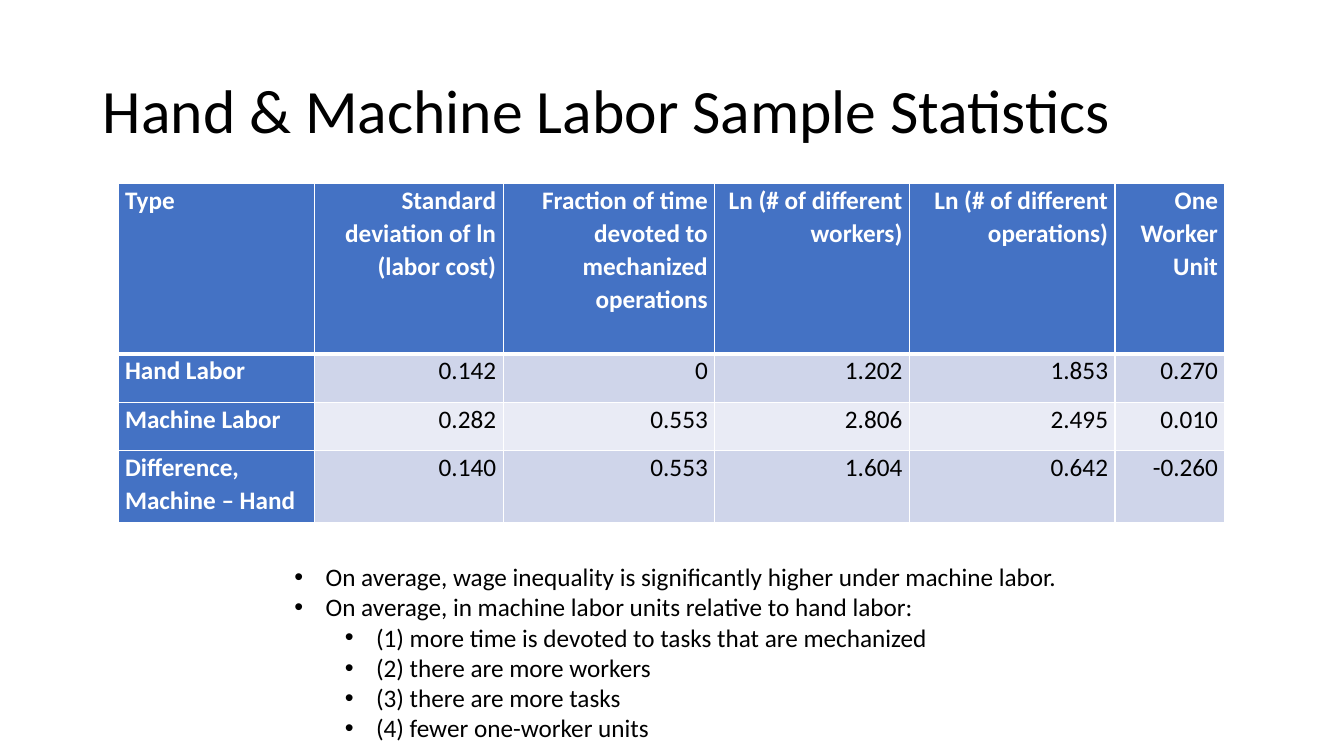
from dataclasses import dataclass

from lxml import etree
from pptx import Presentation
from pptx import util as u
from pptx.dml.color import RGBColor
from pptx.enum import text
from pptx.oxml import ns


@dataclass(frozen=True)
class Theme:
    font: str = "Calibri"
    title_size: int = 44
    body_size: int = 18
    black: str = "000000"
    white: str = "FFFFFF"
    heading: str = "4472C4"
    bands: tuple = ("CFD5EA", "E9EBF5")


THEME = Theme()
TITLE = "Hand & Machine Labor Sample Statistics"
COLUMN_WIDTHS = (1.95, 1.87, 2.1, 1.93, 2.04, 1.09)
ROW_HEIGHTS = (1.69, 0.48, 0.48, 0.72)
STATISTICS = (
    ("Type", "Standard deviation of ln (labor cost)",
     "Fraction of time devoted to mechanized operations",
     "Ln (# of different workers)", "Ln (# of different operations)",
     "One Worker Unit"),
    ("Hand Labor", "0.142", "0", "1.202", "1.853", "0.270"),
    ("Machine Labor", "0.282", "0.553", "2.806", "2.495", "0.010"),
    ("Difference, Machine – Hand", "0.140", "0.553", "1.604", "0.642", "-0.260"),
)
FINDINGS = (
    (0, "On average, wage inequality is significantly higher under machine labor."),
    (0, "On average, in machine labor units relative to hand labor:"),
    (1, "(1) more time is devoted to tasks that are mechanized"),
    (1, "(2) there are more workers"),
    (1, "(3) there are more tasks"),
    (1, "(4) fewer one-worker units"),
)


def place(shape, left, top, width, height):
    shape.left, shape.top = u.Inches(left), u.Inches(top)
    shape.width, shape.height = u.Inches(width), u.Inches(height)


def style_runs(para, size, color, bold=False):
    for span in para.runs:
        span.font.name = THEME.font
        span.font.size = u.Pt(size)
        span.font.bold = bold
        span.font.color.rgb = RGBColor.from_string(color)


def add_title(page):
    title = page.shapes.title
    place(title, 0.92, 0.4, 11.5, 1.45)
    frame = title.text_frame
    frame.text = TITLE
    frame.vertical_anchor = text.MSO_ANCHOR.MIDDLE
    para = frame.paragraphs[0]
    para.alignment = text.PP_ALIGN.LEFT
    para.line_spacing = 0.9
    style_runs(para, THEME.title_size, THEME.black)


def set_bullet(para, indent):
    properties = para._p.get_or_add_pPr()
    properties.set("marL", str(u.Inches(indent)))
    properties.set("indent", str(u.Inches(-0.31)))
    font = etree.SubElement(properties, ns.qn("a:buFont"))
    font.set("typeface", "Arial")
    etree.SubElement(properties, ns.qn("a:buChar")).set("char", "•")


def add_findings(page):
    body = page.placeholders[1]
    place(body, 2.82, 5.52, 7.85, 1.92)
    frame = body.text_frame
    frame.text = "\n".join(finding for _, finding in FINDINGS)
    frame.word_wrap = True
    frame.auto_size = text.MSO_AUTO_SIZE.SHAPE_TO_FIT_TEXT
    for para, (level, _) in zip(frame.paragraphs, FINDINGS):
        para.level = level
        para.space_before = u.Pt(0)
        set_bullet(para, 0.31 + 0.5 * level)
        style_runs(para, THEME.body_size, THEME.black)


def set_borders(cell, top, bottom):
    """Draw white cell borders; top and bottom are widths in points."""
    properties = cell._tc.get_or_add_tcPr()
    widths = {"a:lnL": 1, "a:lnR": 1, "a:lnT": top, "a:lnB": bottom}
    for position, (side, width) in enumerate(widths.items()):
        line = etree.Element(ns.qn(side), w=str(u.Pt(width)))
        fill = etree.SubElement(line, ns.qn("a:solidFill"))
        etree.SubElement(fill, ns.qn("a:srgbClr")).set("val", THEME.white)
        properties.insert(position, line)


def fill_cell(cell, words, row, column):
    heading = row == 0 or column == 0
    cell.text = words
    cell.margin_left = cell.margin_right = u.Inches(0.07)
    cell.margin_top = cell.margin_bottom = 0
    cell.fill.solid()
    color = THEME.heading if heading else THEME.bands[(row - 1) % 2]
    cell.fill.fore_color.rgb = RGBColor.from_string(color)
    set_borders(cell, top=3 if row == 1 else 1, bottom=3 if row == 0 else 1)
    para = cell.text_frame.paragraphs[0]
    para.alignment = text.PP_ALIGN.RIGHT if column else text.PP_ALIGN.LEFT
    para.line_spacing = 1.07
    style_runs(para, THEME.body_size,
               THEME.white if heading else THEME.black, bold=heading)


def add_statistics(page):
    table = page.shapes.add_table(
        len(ROW_HEIGHTS), len(COLUMN_WIDTHS), u.Inches(1.17), u.Inches(1.82),
        u.Inches(sum(COLUMN_WIDTHS)), u.Inches(sum(ROW_HEIGHTS))).table
    table.first_col = True
    for column, width in zip(table.columns, COLUMN_WIDTHS):
        column.width = u.Inches(width)
    for row, height in zip(table.rows, ROW_HEIGHTS):
        row.height = u.Inches(height)
    for row, values in enumerate(STATISTICS):
        for column, words in enumerate(values):
            fill_cell(table.cell(row, column), words, row, column)


def main():
    deck = Presentation()
    deck.slide_width, deck.slide_height = u.Inches(13.33), u.Inches(7.5)
    page = deck.slides.add_slide(deck.slide_layouts[1])
    add_title(page)
    add_findings(page)
    add_statistics(page)
    deck.save("out.pptx")


if __name__ == "__main__":
    main()
